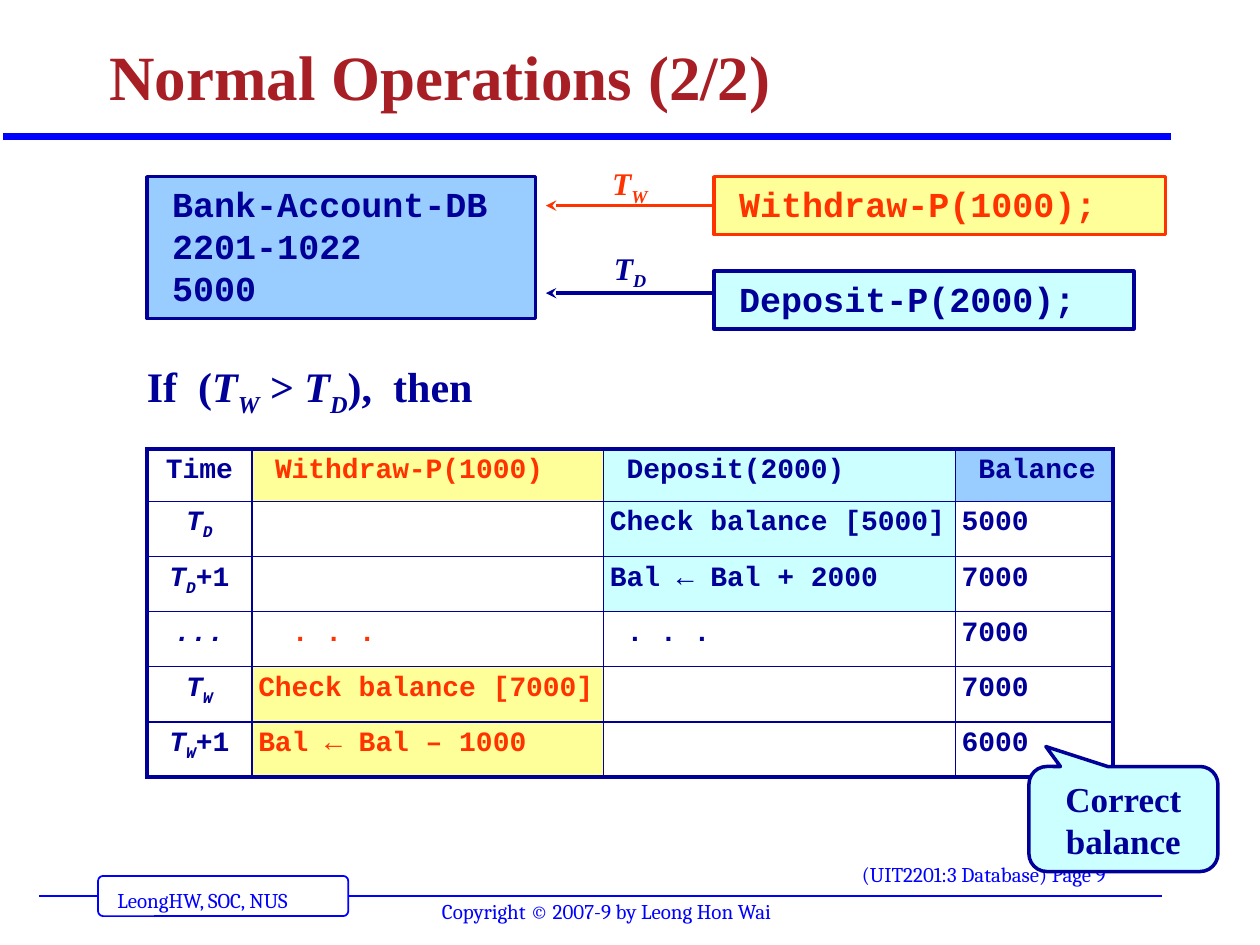
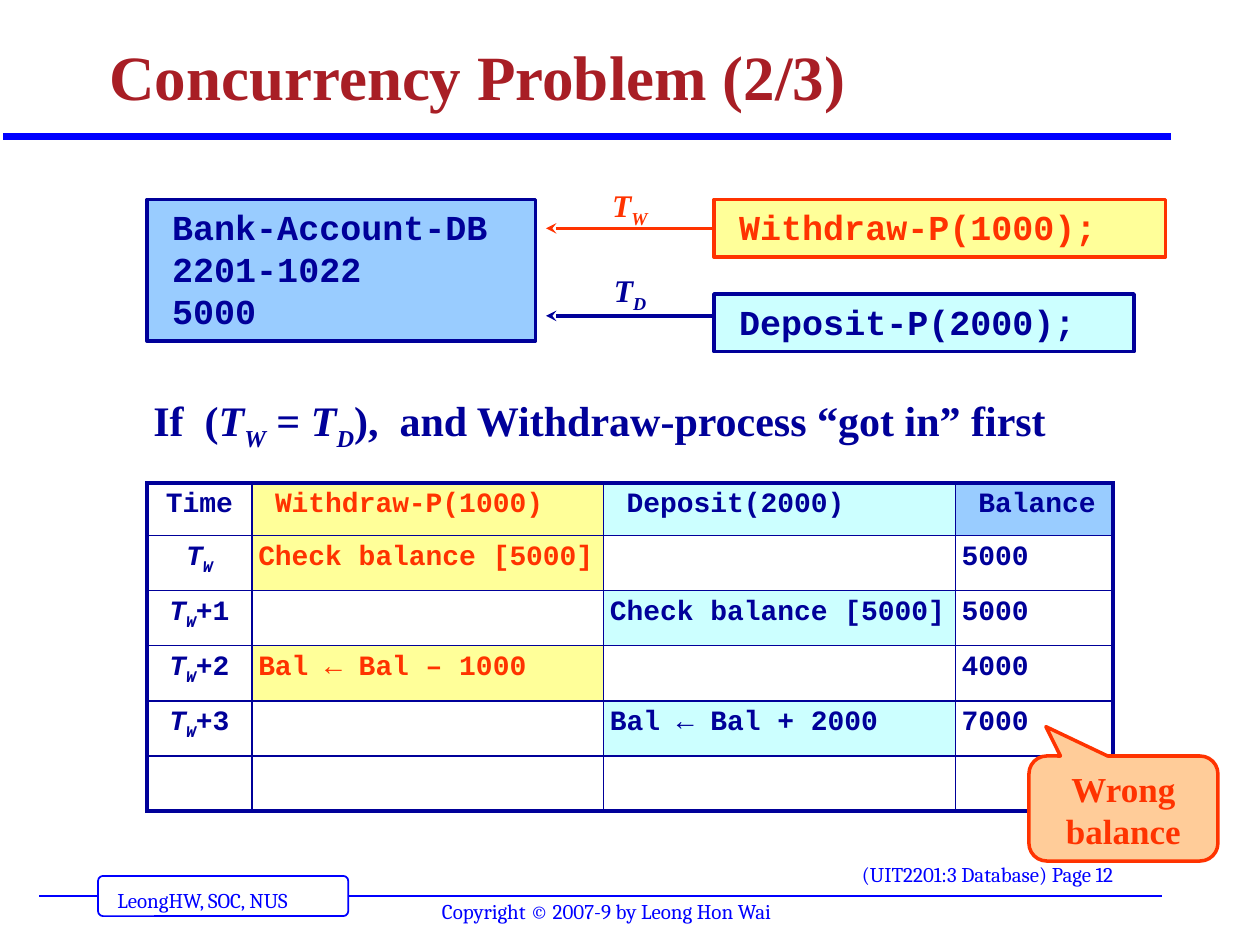
"""Build two slides on database transactions: normal operations and a concurrency problem."""
from lxml import etree
from pptx import Presentation
from pptx.dml.color import RGBColor
from pptx.enum.shapes import MSO_CONNECTOR, MSO_SHAPE
from pptx.enum.text import MSO_ANCHOR, PP_ALIGN
from pptx.oxml.ns import qn
from pptx.util import Pt

COLORS = {"white": "FFFFFF", "blue": "0000FF", "navy": "000099", "title": "A81E25", "red": "FF3300",
          "sky": "99CCFF", "yellow": "FFFF99", "aqua": "CCFFFF", "peach": "FFCC99"}
SERIF, MONO, FOOT = "Times New Roman", "Courier New", "Cambria"
LEFT, CENTER = PP_ALIGN.LEFT, PP_ALIGN.CENTER
TOP, BOTTOM = MSO_ANCHOR.TOP, MSO_ANCHOR.BOTTOM
RECT, ROUND = MSO_SHAPE.RECTANGLE, MSO_SHAPE.ROUNDED_RECTANGLE
CALLOUT = MSO_SHAPE.ROUNDED_RECTANGULAR_CALLOUT
STRAIGHT = MSO_CONNECTOR.STRAIGHT
LEFT_SIDE = 1

# In every text, parts between bars cycle through plain, italic and italic subscript.
SLIDES = [
    {"title": "Normal Operations (2/2)", "page": 9, "flow_top": 101,
     "condition": "If  (|T|W| > |T|D|),  then",
     "condition_place": (54, 202.5, 246, 36), "condition_align": CENTER,
     "table_top": 256.5,
     "steps": [("|T|D", "", "Check balance [5000]", "5000"),
               ("|T|D|+1", "", "Bal ← Bal + 2000", "7000"),
               ("|...", ". . .", ". . .", "7000"),
               ("|T|W", "Check balance [7000]", "", "7000"),
               ("|T|W|+1", "Bal ← Bal – 1000", "", "6000")],
     "verdict": "Correct balance", "verdict_top": 438, "tip": -0.69, "verdict_colors": ("aqua", "navy")},
    {"title": "Concurrency Problem (2/3)", "page": 12, "flow_top": 114,
     "condition": "If  (|T|W| = |T|D|),  and Withdraw-process “got in” first",
     "condition_place": (84, 222, 552, 36), "condition_align": LEFT,
     "table_top": 276,
     "steps": [("|T|W", "Check balance [5000]", "", "5000"),
               ("|T|W|+1", "", "Check balance [5000]", "5000"),
               ("|T|W|+2", "Bal ← Bal – 1000", "", "4000"),
               ("|T|W|+3", "", "Bal ← Bal + 2000", "7000"),
               ("", "", "", "")],
     "verdict": "Wrong balance", "verdict_top": 432, "tip": -0.78, "verdict_colors": ("peach", "red")},
]
ACCOUNT = ["Bank-Account-DB", "2201-1022", "5000"]
# text, symbol, box offset, box width, arrow offset in box, symbol offset, fill, ink
PROCESSES = [("Withdraw-P(1000);", "|T|W", 0, 258, 16.5, -11, "yellow", "red"),
             ("Deposit-P(2000);", "|T|D", 54, 240, 12.5, 37.5, "aqua", "navy")]
HEADER = ("Time", "Withdraw-P(1000)", "Deposit(2000)", "Balance")
COLUMNS = [(60, None, "navy"), (201, "yellow", "red"), (201, "aqua", "navy"), (90, "sky", "navy")]
HEADER_HEIGHT, STEP_HEIGHT = 30, 31.5
CHARACTER = 9.6
ELLIPSIS = ". . ."
FOOTERS = [("LeongHW, SOC, NUS", (60, 503.5, 131, 22)),
           ("(UIT2201:3 Database) Page {page}", (485.5, 489, 180, 22)),
           ("Copyright © 2007-9 by Leong Hon Wai", (245.5, 510, 221, 22))]


def rgb(name):
    return RGBColor.from_string(COLORS[name])


def points(values):
    return [Pt(value) for value in values]


def write_text(frame, lines, font=SERIF, size=20, color="navy", bold=True, align=LEFT,
               anchor=TOP, inset=3.6, spaced=False, line_spacing=None):
    frame.word_wrap = True
    frame.vertical_anchor = anchor
    frame.margin_left = frame.margin_right = Pt(inset)
    frame.margin_top = frame.margin_bottom = Pt(3.6)
    for number, line in enumerate(lines):
        para = frame.add_paragraph() if number else frame.paragraphs[0]
        para.alignment = align
        if line_spacing:
            para.line_spacing = line_spacing
        if spaced:
            para.space_before = Pt(0)
            before = para._p.pPr.find(qn("a:spcBef"))
            before.clear()
            etree.SubElement(before, qn("a:spcPct"), val="50000")
        for index, part in enumerate(line.split("|")):
            if not part:
                continue
            span = para.add_run()
            span.text = part
            span.font.name, span.font.size, span.font.bold = font, Pt(size), bold
            span.font.italic = index % 3 > 0
            span.font.color.rgb = rgb(color)
            if index % 3 == 2:
                span.font._element.set("baseline", "-25000")


def add_label(page, text, place, **style):
    box = page.shapes.add_textbox(*points(place))
    write_text(box.text_frame, [text], **style)


def add_box(page, kind, place, fill, line, width=2):
    box = page.shapes.add_shape(kind, *points(place))
    box.shadow.inherit = False
    box.fill.solid()
    box.fill.fore_color.rgb = rgb(fill)
    box.line.color.rgb = rgb(line)
    box.line.width = Pt(width)
    return box


def add_line(page, x1, x2, y, color, width, arrow=False):
    line = page.shapes.add_connector(STRAIGHT, *points((x1, y, x2, y)))
    line.line.color.rgb = rgb(color)
    line.line.width = Pt(width)
    if arrow:
        etree.SubElement(line.line._get_or_add_ln(), qn("a:tailEnd"), type="stealth")
    etree.SubElement(line._element.spPr, qn("a:effectLst"))
    return line


def add_frame(page, title, number):
    add_line(page, 22.5, 664, 512, "blue", 1)
    badge = add_box(page, ROUND, (56, 500.5, 143, 23), "white", "blue", 1)
    badge.adjustments[0] = 0.125
    add_line(page, 2, 669, 78, "blue", 4)
    for text, place in FOOTERS:
        add_label(page, text.format(page=number), place, font=FOOT, size=12, color="blue",
                  bold=False, inset=7.2)
    add_label(page, title, (55.5, 6, 612, 63), size=36, color="title", anchor=BOTTOM,
              inset=7.2, line_spacing=0.9)


def add_flow(page, top):
    account = add_box(page, RECT, (84, top, 222, 81), "sky", "navy")
    write_text(account.text_frame, ACCOUNT, font=MONO, inset=14.4)
    height = 33
    for text, symbol, offset, width, reach, rise, fill, ink in PROCESSES:
        box = add_box(page, RECT, (408, top + offset, width, height), fill, ink)
        write_text(box.text_frame, [text], font=MONO, color=ink, inset=14.4)
        arrow = add_line(page, 408, 312, top + offset + reach, ink, 2, arrow=True)
        if reach * 2 == height:
            arrow.begin_connect(box, LEFT_SIDE)
        add_label(page, symbol, (336, top + rise, 48, 29), size=18, color=ink, align=CENTER, spaced=True)


def set_borders(cell, outer):
    for position, side in enumerate("LRTB"):
        width = 2.25 if side in outer else 1
        border = etree.Element(qn("a:ln" + side), w=str(Pt(width)))
        fill = etree.SubElement(border, qn("a:solidFill"))
        etree.SubElement(fill, qn("a:srgbClr"), val=COLORS["navy"])
        cell._tc.get_or_add_tcPr().insert(position, border)


def add_schedule(page, top, steps):
    rows = [HEADER] + steps
    heights = [HEADER_HEIGHT] + [STEP_HEIGHT] * len(steps)
    widths = [column[0] for column in COLUMNS]
    place = points((84, top, sum(widths), sum(heights)))
    table = page.shapes.add_table(len(rows), len(COLUMNS), *place).table
    table.first_row = table.horz_banding = False
    for column, width in zip(table.columns, widths):
        column.width = Pt(width)
    last_row, last_column = len(rows) - 1, len(COLUMNS) - 1
    for r, (row, height) in enumerate(zip(rows, heights)):
        table.rows[r].height = Pt(height)
        for c, (text, (width, fill, ink)) in enumerate(zip(row, COLUMNS)):
            cell = table.cell(r, c)
            write_text(cell.text_frame, [text], font=MONO, size=16, color=ink,
                       align=LEFT if c else CENTER, spaced=True)
            indent = 1 if r == 0 and c else 3 - c if text == ELLIPSIS else 0
            cell.margin_left = Pt(3.6 + indent * CHARACTER)
            cell.margin_right = cell.margin_top = cell.margin_bottom = Pt(3.6)
            active = c in (1, 2) and text not in ("", ELLIPSIS)
            if fill and (r == 0 or active):
                cell.fill.solid()
                cell.fill.fore_color.rgb = rgb(fill)
            else:
                cell.fill.background()
            edges = {"L": c == 0, "R": c == last_column, "T": r == 0, "B": r == last_row}
            set_borders(cell, [side for side, outer in edges.items() if outer])


def add_verdict(page, text, top, tip, colors):
    fill, ink = colors
    box = add_box(page, CALLOUT, (588, top, 108, 60), fill, ink)
    for index, value in enumerate((-0.41, tip, 0.17)):
        box.adjustments[index] = value
    write_text(box.text_frame, [text], color=ink, align=CENTER, spaced=True)


def main():
    deck = Presentation()
    deck.slide_width, deck.slide_height = Pt(720), Pt(540)
    for content in SLIDES:
        page = deck.slides.add_slide(deck.slide_layouts[6])
        add_frame(page, content["title"], content["page"])
        add_flow(page, content["flow_top"])
        add_schedule(page, content["table_top"], content["steps"])
        add_label(page, content["condition"], content["condition_place"], size=24,
                  align=content["condition_align"], spaced=True)
        add_verdict(page, content["verdict"], content["verdict_top"], content["tip"],
                    content["verdict_colors"])
    deck.save("out.pptx")


if __name__ == "__main__":
    main()
